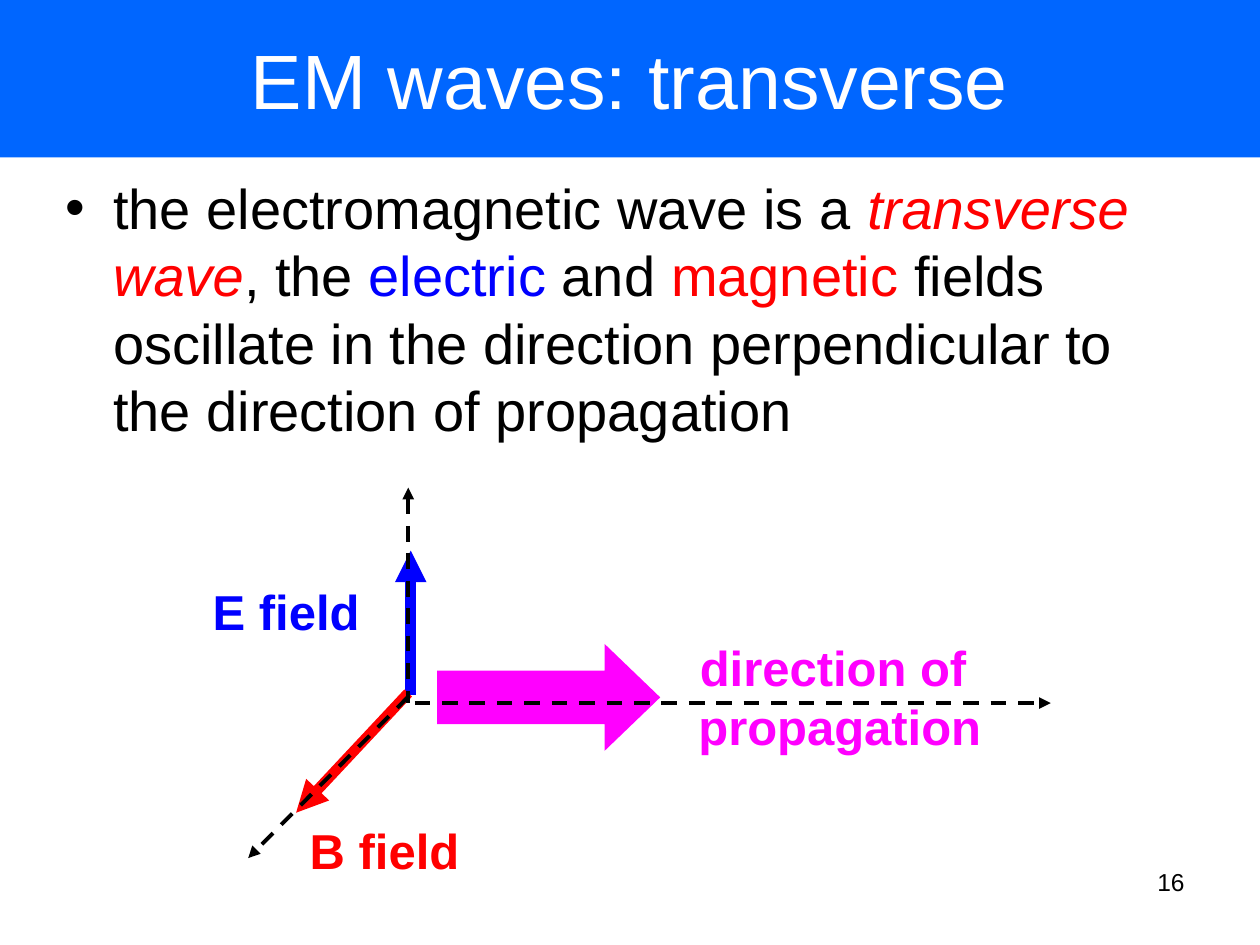
from dataclasses import dataclass

from lxml.etree import SubElement
from pptx import Presentation
from pptx.dml.color import RGBColor
from pptx.enum.dml import MSO_LINE
from pptx.enum.shapes import MSO_CONNECTOR, MSO_SHAPE
from pptx.enum.text import MSO_ANCHOR, MSO_AUTO_SIZE, PP_ALIGN
from pptx.oxml.ns import qn
from pptx.util import Inches, Pt


@dataclass(frozen=True)
class Theme:
    font: str = "Arial"
    banner: str = "0066FF"
    white: str = "FFFFFF"
    text: str = "000000"
    electric: str = "0000FF"
    magnetic: str = "FF0000"
    propagation: str = "FF00FF"
    title_size: int = 44
    body_size: int = 32
    label_size: int = 28
    number_size: int = 14
    field_width: float = 6
    axis_width: float = 2.25


THEME = Theme()


def add_run(p, text, size, color, bold=False, italic=False):
    r = p.add_run()
    r.text = text
    r.font.name = THEME.font
    r.font.size = Pt(size)
    r.font.bold = bold
    r.font.italic = italic
    r.font.color.rgb = RGBColor.from_string(color)


def add_block(s, kind, box, color):
    sp = s.shapes.add_shape(kind, *map(Inches, box))
    sp.shadow.inherit = False
    sp.fill.solid()
    sp.fill.fore_color.rgb = RGBColor.from_string(color)
    sp.line.fill.background()
    return sp


def add_title(s, text):
    sp = add_block(s, MSO_SHAPE.RECTANGLE, (0, 0, 10, 1.25), THEME.banner)
    tf = sp.text_frame
    tf.vertical_anchor = MSO_ANCHOR.MIDDLE
    p = tf.paragraphs[0]
    p.alignment = PP_ALIGN.CENTER
    add_run(p, text, THEME.title_size, THEME.white)


def add_text_box(s, box, wrap=True):
    tf = s.shapes.add_textbox(*map(Inches, box)).text_frame
    tf.word_wrap = wrap
    return tf


def add_bullet(s, box, runs):
    p = add_text_box(s, box).paragraphs[0]
    p.space_before = Pt(THEME.body_size * 0.2)
    pPr = p._p.get_or_add_pPr()
    pPr.set("marL", str(Inches(0.38)))
    pPr.set("indent", str(Inches(-0.38)))
    SubElement(pPr, qn("a:buFont"), typeface=THEME.font)
    SubElement(pPr, qn("a:buChar"), char="•")
    for text, color, italic in runs:
        add_run(p, text, THEME.body_size, color, italic=italic)


def add_label(s, box, lines, color, align=PP_ALIGN.LEFT):
    tf = add_text_box(s, box, wrap=False)
    tf.auto_size = MSO_AUTO_SIZE.SHAPE_TO_FIT_TEXT
    for i, line in enumerate(lines):
        p = tf.add_paragraph() if i else tf.paragraphs[0]
        p.alignment = align
        add_run(p, line, THEME.label_size, color, bold=True)


def add_arrow(s, start, end, color, width, dash=None, tip="tailEnd"):
    c = s.shapes.add_connector(MSO_CONNECTOR.STRAIGHT, *map(Inches, start + end))
    c.line.color.rgb = RGBColor.from_string(color)
    c.line.width = Pt(width)
    if dash:
        c.line.dash_style = dash
    SubElement(c.line._get_or_add_ln(), qn(f"a:{tip}"), type="triangle")
    SubElement(c._element.spPr, qn("a:effectLst"))


def add_axis(s, start, end, tip="tailEnd"):
    add_arrow(s, start, end, THEME.text, THEME.axis_width, MSO_LINE.DASH, tip)


def add_slide_number(s, number):
    p = add_text_box(s, (7.17, 6.83, 2.33, 0.52)).paragraphs[0]
    p.alignment = PP_ALIGN.RIGHT
    add_run(p, number, THEME.number_size, THEME.text)


def main():
    prs = Presentation()
    prs.slide_width, prs.slide_height = Inches(10), Inches(7.5)
    s = prs.slides.add_slide(prs.slide_layouts[6])

    add_title(s, "EM waves: transverse")
    add_bullet(s, (0.42, 1.33, 9, 2.32), [
        ("the electromagnetic wave is a ", THEME.text, False),
        ("transverse wave", THEME.magnetic, True),
        (", the ", THEME.text, False),
        ("electric", THEME.electric, False),
        (" and ", THEME.text, False),
        ("magnetic ", THEME.magnetic, False),
        ("fields oscillate in the direction perpendicular to "
         "the direction of propagation", THEME.text, False),
    ])

    add_arrow(s, (3.26, 5.52), (3.26, 4.37), THEME.electric, THEME.field_width)
    add_arrow(s, (3.24, 5.5), (2.35, 6.45), THEME.magnetic, THEME.field_width)
    block = add_block(s, MSO_SHAPE.RIGHT_ARROW, (3.47, 5.11, 1.77, 0.85),
                      THEME.propagation)
    block.adjustments[1] = 0.52

    add_label(s, (1.59, 4.57, 1.37, 0.57), ["E field"], THEME.electric)
    add_label(s, (2.36, 6.46, 1.39, 0.57), ["B field"], THEME.magnetic)
    add_label(s, (5.44, 5.01, 2.45, 1.03), ["direction of ", "propagation"],
              THEME.propagation, PP_ALIGN.CENTER)

    add_axis(s, (3.24, 3.87), (3.24, 5.58), tip="headEnd")
    add_axis(s, (3.24, 5.53), (1.97, 6.81))
    add_axis(s, (3.29, 5.58), (8.34, 5.58))
    add_slide_number(s, "16")

    prs.save("out.pptx")


if __name__ == "__main__":
    main()
